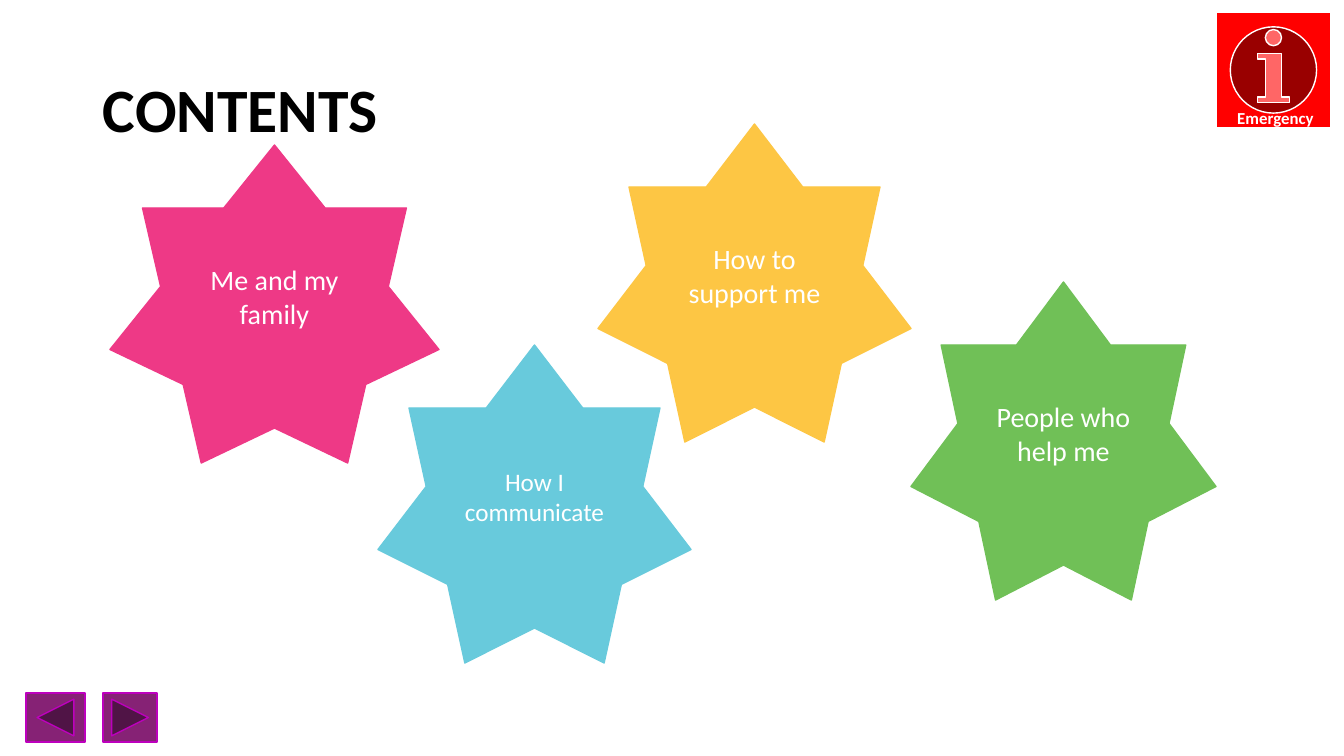
from pptx import Presentation
from pptx.dml.color import RGBColor
from pptx.enum.shapes import MSO_SHAPE as Preset
from pptx.enum.text import MSO_ANCHOR as Anchor, PP_ALIGN as Align
from pptx.util import Emu, Pt

# Content: boxes are left, top, width, height in px
SLIDE_SIZE = (1344, 756)
TITLE = ("CONTENTS", (93, 40, 1159, 146))
CAPTION = ("Emergency", (1217, 103, 117, 30))
STAR_HEIGHT = 318
STARS = [  # text, left, top, width, colour, type size
    ("People who help me", 911, 282, 305, "green", "topic"),
    ("How to support me", 598, 124, 313, "yellow", "topic"),
    ("Me and my family", 110, 145, 329, "pink", "topic"),
    ("How I communicate", 378, 345, 313, "blue", "topic_small"),
]
BUTTONS = [  # preset, box, fill, line
    (Preset.ACTION_BUTTON_FORWARD_OR_NEXT, (103, 693, 54, 49), "purple", "violet"),
    (Preset.ACTION_BUTTON_BACK_OR_PREVIOUS, (26, 693, 59, 49), "purple", "violet"),
    (Preset.ACTION_BUTTON_INFORMATION, (1216, 12, 115, 116), "red", "white"),
]
THEME = {
    "font": "Calibri",
    "colours": {
        "black": "000000", "white": "FFFFFF", "green": "70C057",
        "yellow": "FDC644", "pink": "EE3986", "blue": "68CADC",
        "purple": "862275", "violet": "BD00BD", "red": "FF0000",
    },
    "sizes": {"title": 44, "topic": 20, "topic_small": 18, "caption": 12},
}
EMU_PER_PX = 914400 / 100.8


def px(*lengths):
    return [Emu(round(length * EMU_PER_PX)) for length in lengths]


def colour(name):
    return RGBColor.from_string(THEME["colours"][name])


def write(shape, text, size, ink, anchor, align, bold=False, spacing=1.0):
    frame = shape.text_frame
    frame.word_wrap = True
    frame.vertical_anchor = anchor
    paragraph = frame.paragraphs[0]
    paragraph.text = text
    paragraph.alignment = align
    paragraph.line_spacing = spacing
    font = paragraph.runs[0].font
    font_format = {"name": THEME["font"], "size": Pt(THEME["sizes"][size]), "bold": bold}
    for name, value in font_format.items():
        setattr(font, name, value)
    font.color.rgb = colour(ink)


def add_preset(slide, preset, box, fill, line):
    shape = slide.shapes.add_shape(preset, *px(*box))
    shape.shadow.inherit = False
    shape.fill.solid()
    shape.fill.fore_color.rgb = colour(fill)
    shape.line.color.rgb = colour(line)
    shape.line.width = Pt(1)
    return shape


def main():
    presentation = Presentation()
    presentation.slide_width, presentation.slide_height = px(*SLIDE_SIZE)
    slide = presentation.slides.add_slide(presentation.slide_layouts[6])

    # Title
    text, box = TITLE
    write(slide.shapes.add_textbox(*px(*box)), text, "title", "black",
          Anchor.MIDDLE, Align.LEFT, bold=True, spacing=0.9)

    # Topic stars
    for text, left, top, width, fill, size in STARS:
        star = add_preset(slide, Preset.STAR_7_POINT,
                          (left, top, width, STAR_HEIGHT), fill, fill)
        write(star, text, size, "white", Anchor.MIDDLE, Align.CENTER)

    # Navigation and emergency buttons
    for button in BUTTONS:
        add_preset(slide, *button)
    text, box = CAPTION
    write(slide.shapes.add_textbox(*px(*box)), text, "caption", "white",
          Anchor.TOP, Align.CENTER, bold=True)

    presentation.save("out.pptx")


if __name__ == "__main__":
    main()
